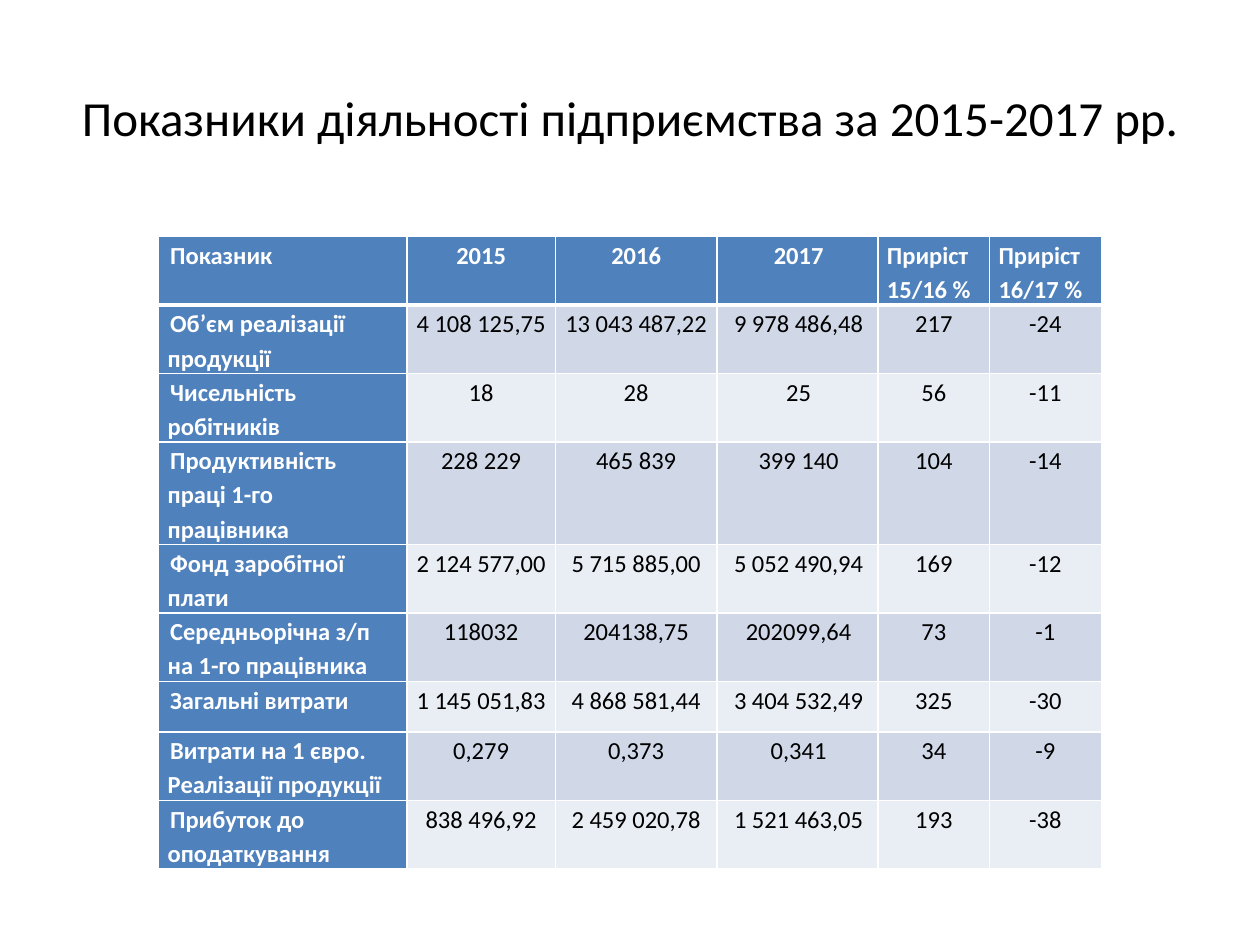
import lxml.etree
import pptx
import pptx.dml.color
import pptx.enum.text
import pptx.oxml.ns
import pptx.util

Cm = pptx.util.Cm
Pt = pptx.util.Pt
RGBColor = pptx.dml.color.RGBColor
ALIGN = pptx.enum.text.PP_ALIGN

BLACK = RGBColor(0x00, 0x00, 0x00)
WHITE = RGBColor(0xFF, 0xFF, 0xFF)
BLUE = RGBColor(0x4F, 0x81, 0xBD)
BANDS = (RGBColor(0xE9, 0xED, 0xF4), RGBColor(0xD0, 0xD8, 0xE8))
FONT = "Calibri"

TITLE = "Показники діяльності підприємства за 2015-2017 рр."
INDICATORS = (
    ("Показник", "2015", "2016", "2017", "Приріст 15/16 %", "Приріст 16/17 %"),
    ("Об’єм реалізації продукції", "4 108 125,75", "13 043 487,22", "9 978 486,48", "217", "-24"),
    ("Чисельність робітників", "18", "28", "25", "56", "-11"),
    ("Продуктивність праці 1-го працівника", "228 229", "465 839", "399 140", "104", "-14"),
    ("Фонд заробітної плати", "2 124 577,00", "5 715 885,00", "5 052 490,94", "169", "-12"),
    ("Середньорічна з/п на 1-го працівника", "118032", "204138,75", "202099,64", "73", "-1"),
    ("Загальні витрати", "1 145 051,83", "4 868 581,44", "3 404 532,49", "325", "-30"),
    ("Витрати на 1 євро. Реалізації продукції", "0,279", "0,373", "0,341", "34", "-9"),
    ("Прибуток до оподаткування", "838 496,92", "2 459 020,78", "1 521 463,05", "193", "-38"),
)
COLUMN_WIDTHS = (5, 3, 3.25, 3.25, 2.25, 2.25)
ROW_HEIGHTS = (1.38, 1.38, 1.38, 2.07, 1.38, 1.38, 1.02, 1.38, 1.38)
FIRST_LINE_INDENTS = (0.05, 0, 0, 0.05, 0, -0.03)


def add_span(para, text, size, color, bold=False):
    """Append one formatted run to a paragraph."""
    span = para.add_run()
    span.text = text
    span.font.name = FONT
    span.font.size = Pt(size)
    span.font.bold = bold
    span.font.color.rgb = color


def add_border(cell, side, width):
    """Draw a white line on one side of a cell."""
    qn = pptx.oxml.ns.qn
    properties = cell._tc.get_or_add_tcPr()
    line = lxml.etree.SubElement(properties, qn(f"a:ln{side}"), w=str(Pt(width)))
    fill = lxml.etree.SubElement(line, qn("a:solidFill"))
    lxml.etree.SubElement(fill, qn("a:srgbClr"), val=str(WHITE))


def format_cell(cell, text, row, column):
    """Fill a cell with its text, borders and colour."""
    is_heading = row == 0 or column == 0
    for side in "LRTB":
        under_header = (row, side) in ((0, "B"), (1, "T"))
        add_border(cell, side, 3 if under_header else 1)
    cell.fill.solid()
    cell.fill.fore_color.rgb = BLUE if is_heading else BANDS[row % 2]
    cell.margin_left = cell.margin_right = Cm(0.18)
    cell.margin_top = cell.margin_bottom = 0
    para = cell.text_frame.paragraphs[0]
    left_aligned = column == 0 or (row == 0 and column > 3)
    para.alignment = ALIGN.LEFT if left_aligned else ALIGN.CENTER
    para.line_spacing = 1.15
    para.space_after = Pt(10)
    indent = Cm(FIRST_LINE_INDENTS[column])
    para._p.get_or_add_pPr().set("indent", str(indent))
    add_span(para, text, 14, WHITE if is_heading else BLACK, is_heading)


def add_title(page, left, top, width, height):
    """Place the centred slide title."""
    box = page.shapes.add_textbox(left, top, width, height)
    frame = box.text_frame
    frame.word_wrap = True
    frame.vertical_anchor = pptx.enum.text.MSO_ANCHOR.MIDDLE
    para = frame.paragraphs[0]
    para.alignment = ALIGN.CENTER
    add_span(para, TITLE, 28, BLACK)


def add_indicator_table(page, left, top):
    """Place the table of yearly indicators."""
    width, height = Cm(sum(COLUMN_WIDTHS)), Cm(sum(ROW_HEIGHTS))
    shape = page.shapes.add_table(
        len(ROW_HEIGHTS), len(COLUMN_WIDTHS), left, top, width, height
    )
    table = shape.table
    table.first_col = True
    for column, size in zip(table.columns, COLUMN_WIDTHS):
        column.width = Cm(size)
    for row, size in zip(table.rows, ROW_HEIGHTS):
        row.height = Cm(size)
    for row, texts in enumerate(INDICATORS):
        for column, text in enumerate(texts):
            format_cell(table.cell(row, column), text, row, column)


def main():
    """Build and save the deck."""
    deck = pptx.Presentation()
    deck.slide_width = Cm(25.4)
    deck.slide_height = Cm(19.05)
    page = deck.slides.add_slide(deck.slide_layouts[6])
    add_title(page, Cm(1.27), Cm(0.76), Cm(22.86), Cm(3.18))
    add_indicator_table(page, Cm(3.2), Cm(4.77))
    deck.save("out.pptx")


if __name__ == "__main__":
    main()
